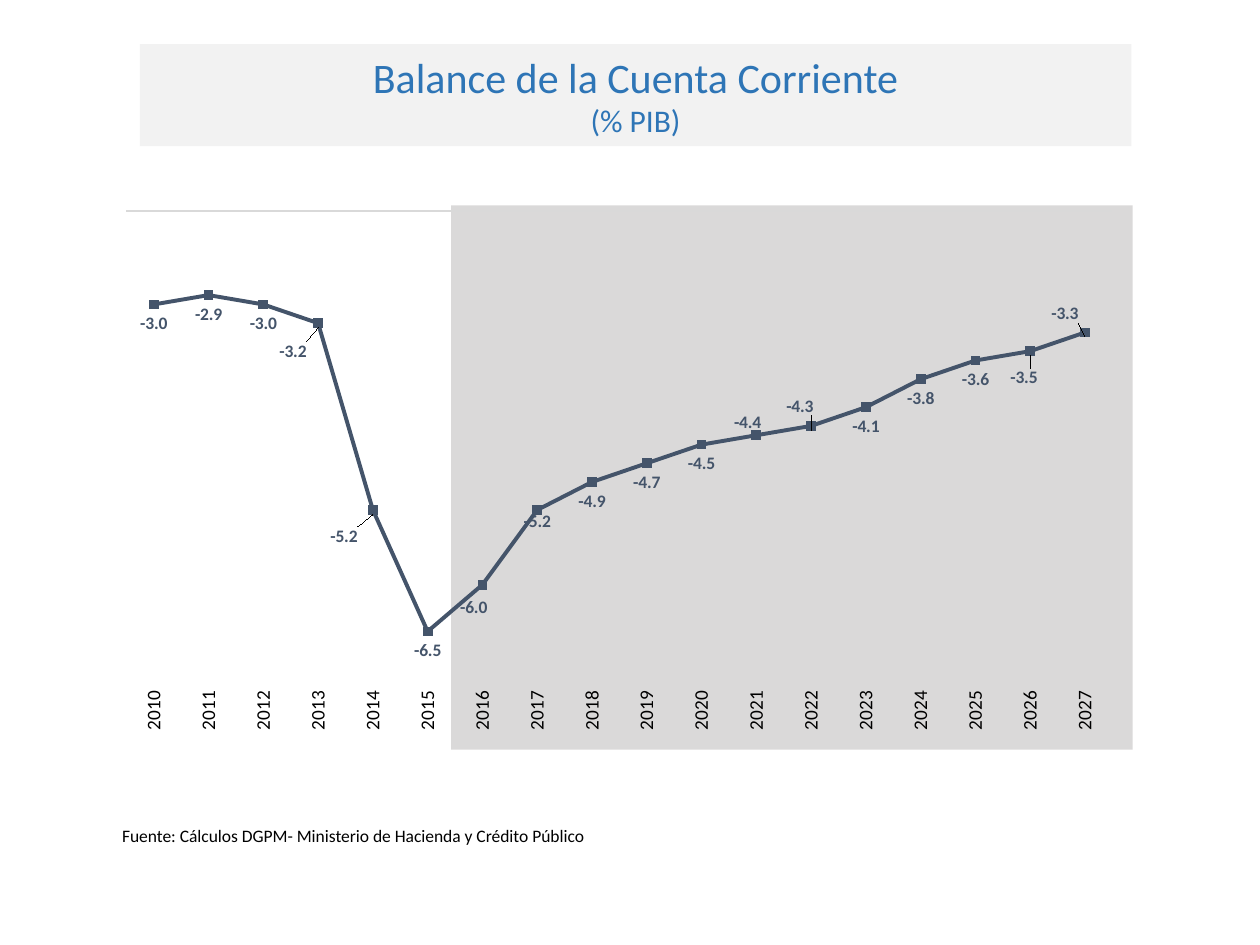
from dataclasses import dataclass
from lxml import etree
from pptx import Presentation
from pptx.chart.data import CategoryChartData
from pptx.dml.color import RGBColor
from pptx.enum.chart import XL_CHART_TYPE, XL_LABEL_POSITION, XL_TICK_LABEL_POSITION, XL_TICK_MARK
from pptx.enum.shapes import MSO_SHAPE
from pptx.enum.text import MSO_ANCHOR, MSO_AUTO_SIZE, PP_ALIGN
from pptx.oxml import parse_xml
from pptx.oxml.ns import nsdecls, qn
from pptx.util import Inches, Pt

RECTANGLE = MSO_SHAPE.RECTANGLE
CENTER = PP_ALIGN.CENTER
MIDDLE = MSO_ANCHOR.MIDDLE
GROW = MSO_AUTO_SIZE.SHAPE_TO_FIT_TEXT
LINE = XL_CHART_TYPE.LINE
BELOW = XL_LABEL_POSITION.BELOW
LOW = XL_TICK_LABEL_POSITION.LOW
NO_TICK = XL_TICK_MARK.NONE


@dataclass(frozen=True)
class Theme:
    font: str = "Calibri"
    black: RGBColor = RGBColor.from_string("000000")
    title: RGBColor = RGBColor.from_string("2E75B6")
    banner: RGBColor = RGBColor.from_string("F2F2F2")
    forecast: RGBColor = RGBColor.from_string("AFABAB")
    series: RGBColor = RGBColor.from_string("44546A")
    axis: RGBColor = RGBColor.from_string("D9D9D9")
    title_size: Pt = Pt(24)
    subtitle_size: Pt = Pt(18)
    axis_size: Pt = Pt(11)
    small_size: Pt = Pt(10)


theme = Theme()


def style_font(font, size, color, bold=False):
    font.name = theme.font
    font.size = size
    font.bold = bold
    font.color.rgb = color


def add_rectangle(left, top, width, height, color):
    shape = slide.shapes.add_shape(RECTANGLE, Inches(left), Inches(top), Inches(width), Inches(height))
    shape.shadow.inherit = False
    shape.fill.solid()
    shape.fill.fore_color.rgb = color
    shape.line.fill.background()
    return shape


presentation = Presentation()
presentation.slide_width = Inches(10)
presentation.slide_height = Inches(7.5)
slide = presentation.slides.add_slide(presentation.slide_layouts[6])

forecast_band = add_rectangle(3.58, 1.63, 5.41, 4.32, theme.forecast)
band_color = forecast_band._element.spPr.find(qn("a:solidFill"))[0]
etree.SubElement(band_color, qn("a:alpha")).set("val", "45000")

source_box = slide.shapes.add_textbox(Inches(0.87), Inches(6.5), Inches(5.41), Inches(0.27))
source_frame = source_box.text_frame
source_frame.word_wrap = True
source_frame.auto_size = GROW
source_run = source_frame.paragraphs[0].add_run()
source_run.text = "Fuente: Cálculos DGPM- Ministerio de Hacienda y Crédito Público"
style_font(source_run.font, theme.small_size, theme.black)

banner = add_rectangle(1.11, 0.35, 7.87, 0.81, theme.banner)
banner_frame = banner.text_frame
banner_frame.word_wrap = True
banner_frame.auto_size = GROW
banner_frame.vertical_anchor = MIDDLE
title_paragraph = banner_frame.paragraphs[0]
subtitle_paragraph = banner_frame.add_paragraph()
for paragraph, text, size in (
    (title_paragraph, "Balance de la Cuenta Corriente", theme.title_size),
    (subtitle_paragraph, "(% PIB)", theme.subtitle_size),
):
    paragraph.alignment = CENTER
    run = paragraph.add_run()
    run.text = text
    style_font(run.font, size, theme.title)

balances = [-3, -2.9, -3, -3.2, -5.2, -6.5, -6, -5.2, -4.9,
            -4.7, -4.5, -4.4, -4.3, -4.1, -3.8, -3.6, -3.5, -3.3]
chart_data = CategoryChartData()
chart_data.categories = [str(year) for year in range(2010, 2028)]
chart_data.add_series("Series 1", balances)
chart_width, chart_height = Inches(8.37), Inches(4.7)
chart = slide.shapes.add_chart(LINE, Inches(0.61), Inches(1.52), chart_width, chart_height, chart_data).chart
chart.has_legend = False
chart.has_title = False
style_font(chart.font, theme.small_size, theme.black)

category_axis = chart.category_axis
category_axis.tick_label_position = LOW
category_axis.major_tick_mark = NO_TICK
category_axis.minor_tick_mark = NO_TICK
category_axis.format.line.color.rgb = theme.axis
category_axis.format.line.width = Pt(0.75)
style_font(category_axis.tick_labels.font, theme.axis_size, theme.black)
category_axis._element.txPr.find(qn("a:bodyPr")).set("rot", "-5400000")

value_axis = chart.value_axis
value_axis.minimum_scale = -7
value_axis.maximum_scale = -2
value_axis.has_major_gridlines = False
value_axis.visible = False

plot = chart.plots[0]
plot.vary_by_categories = False
series = plot.series[0]
series.smooth = False
series.marker.style = None
series.format.line.color.rgb = theme.series
series.format.line.width = Pt(2.25)

labels = series.data_labels
labels.show_value = True
labels.number_format = "#,##0.0"
labels.number_format_is_linked = False
labels.position = BELOW
style_font(labels.font, theme.small_size, theme.series, True)

label_shifts = {
    3: (-0.2, 0.07), 4: (-0.23, 0.06), 6: (-0.07, 0.03), 7: (0, -0.06),
    11: (-0.07, -0.25), 12: (-0.09, -0.31), 16: (-0.05, 0.06), 17: (-0.16, -0.3),
}
for index, (shift_x, shift_y) in label_shifts.items():
    label = series.points[index].data_label
    style_font(label.font, theme.small_size, theme.series, True)
    label.position = BELOW
    label_element = label._get_or_add_dLbl()
    label_element.insert(1, parse_xml(
        f'<c:layout {nsdecls("c")}><c:manualLayout>'
        f'<c:x val="{Inches(shift_x) / chart_width}"/><c:y val="{Inches(shift_y) / chart_height}"/>'
        '</c:manualLayout></c:layout>'))
    label_element.insert(2, parse_xml(
        f'<c:numFmt {nsdecls("c")} formatCode="#,##0.0" sourceLinked="0"/>'))

plot_area = chart._chartSpace.chart.plotArea
for old_layout in plot_area.findall(qn("c:layout")):
    plot_area.remove(old_layout)
plot_area.insert(0, parse_xml(
    f'<c:layout {nsdecls("c")}><c:manualLayout><c:layoutTarget val="inner"/>'
    '<c:xMode val="edge"/><c:yMode val="edge"/><c:x val="0.047"/><c:y val="0.033"/>'
    '<c:w val="0.935"/><c:h val="0.789"/></c:manualLayout></c:layout>'))
chart._chartSpace.chart.addnext(parse_xml(
    f'<c:spPr {nsdecls("c", "a")}><a:noFill/><a:ln><a:noFill/></a:ln></c:spPr>'))

presentation.save("out.pptx")
